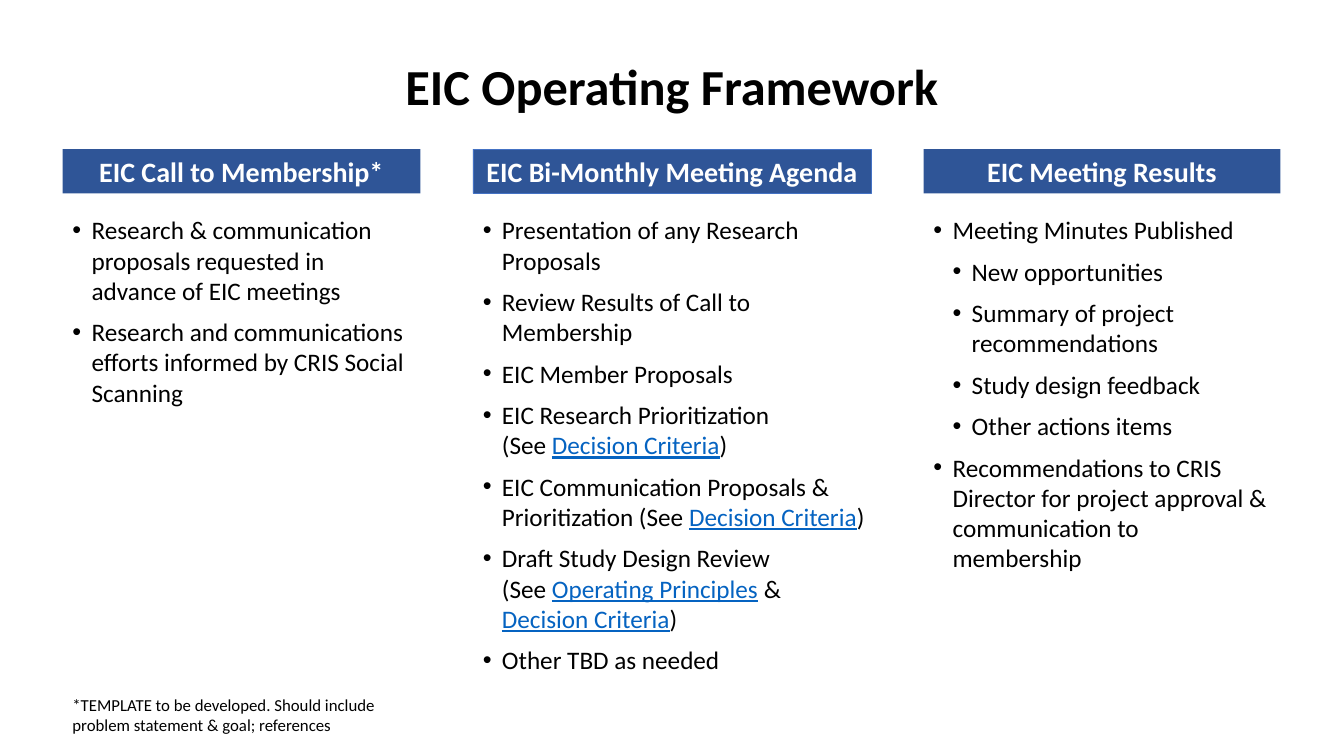
from dataclasses import dataclass

from lxml import etree
from pptx import Presentation
from pptx.dml.color import RGBColor
from pptx.enum.shapes import MSO_SHAPE
from pptx.enum.text import MSO_ANCHOR, MSO_AUTO_SIZE, PP_ALIGN
from pptx.oxml.ns import qn
from pptx.util import Pt

RECTANGLE = MSO_SHAPE.RECTANGLE
TOP, MIDDLE = MSO_ANCHOR.TOP, MSO_ANCHOR.MIDDLE
LEFT, CENTER = PP_ALIGN.LEFT, PP_ALIGN.CENTER
GROW = MSO_AUTO_SIZE.SHAPE_TO_FIT_TEXT
NO_RESIZE = MSO_AUTO_SIZE.NONE
PX = 9144
BREAK = "\v"


@dataclass(frozen=True)
class Theme:
    """Colours, font and type sizes of the slide."""
    font: str = "Calibri"
    ink: RGBColor = RGBColor(0, 0, 0)
    paper: RGBColor = RGBColor(255, 255, 255)
    band: RGBColor = RGBColor(0x2F, 0x55, 0x97)
    band_edge: RGBColor = RGBColor(0x44, 0x72, 0xC4)
    link: RGBColor = RGBColor(0x05, 0x63, 0xC1)
    title_size: int = 36
    heading_size: int = 20
    body_size: int = 18
    note_size: int = 12


THEME = Theme()
HEADING_TOP, HEADING_HEIGHT, BODY_GAP = 148, 44, 16
INDENT = 19
CRITERIA, PRINCIPLES = "Decision Criteria", "Operating Principles"
LINKED = {CRITERIA, PRINCIPLES}

CALL_ITEMS = [
    (0, ["Research & communication proposals requested in advance of EIC meetings"]),
    (0, ["Research and communications efforts informed by CRIS Social Scanning"]),
]
AGENDA_ITEMS = [
    (0, ["Presentation of any Research Proposals"]),
    (0, ["Review Results of Call to Membership"]),
    (0, ["EIC Member Proposals"]),
    (0, ["EIC Research Prioritization", BREAK, "(See ", CRITERIA, ")"]),
    (0, ["EIC Communication Proposals & Prioritization (See ", CRITERIA, ")"]),
    (0, ["Draft Study Design Review", BREAK, "(See ", PRINCIPLES, " & ", CRITERIA, ")"]),
    (0, ["Other TBD as needed"]),
]
RESULT_ITEMS = [
    (0, ["Meeting Minutes Published"]),
    (1, ["New opportunities"]),
    (1, ["Summary of project recommendations"]),
    (1, ["Study design feedback"]),
    (1, ["Other actions items"]),
    (0, ["Recommendations to CRIS Director for project approval & "
         "communication to membership"]),
]
COLUMNS = [
    (62, 355, 355, 203, "EIC Call to Membership*", CALL_ITEMS, None),
    (469, 395, 400, 471, "EIC Bi-Monthly Meeting Agenda", AGENDA_ITEMS, THEME.band_edge),
    (916, 354, 354, 369, "EIC Meeting Results", RESULT_ITEMS, None),
]


def emu(*lengths):
    """Turn px lengths into EMU."""
    return [length * PX for length in lengths]


def style_run(run, size, color, bold=False, underline=False):
    """Apply font, size, colour and weight to a run."""
    run.font.name = THEME.font
    run.font.size = Pt(size)
    run.font.color.rgb = color
    run.font.bold = bold
    run.font.underline = underline


def write_line(frame, text, size, color, bold=False, align=LEFT):
    """Fill a text frame with one wrapped paragraph."""
    frame.word_wrap = True
    frame.text = text
    paragraph = frame.paragraphs[0]
    paragraph.alignment = align
    style_run(paragraph.runs[0], size, color, bold)
    return paragraph


def add_panel(slide, box, fill=None, edge=None, edge_width=0.75):
    """Add a flat rectangle with an optional fill and edge."""
    panel = slide.shapes.add_shape(RECTANGLE, *emu(*box))
    panel.shadow.inherit = False
    if fill is None:
        panel.fill.background()
    else:
        panel.fill.solid()
        panel.fill.fore_color.rgb = fill
    if edge is None:
        panel.line.fill.background()
    else:
        panel.line.color.rgb = edge
        panel.line.width = Pt(edge_width)
    return panel


def add_bullet(paragraph, level, pieces):
    """Write one bulleted item from plain, linked and line-break pieces."""
    paragraph.level = level
    paragraph.alignment = LEFT
    paragraph.space_after = Pt(8)
    properties = paragraph._p.get_or_add_pPr()
    properties.set("marL", str(INDENT * (level + 1) * PX))
    properties.set("indent", str(-INDENT * PX))
    etree.SubElement(properties, qn("a:buFont"), typeface="Arial")
    etree.SubElement(properties, qn("a:buChar"), char="•")
    for piece in pieces:
        if piece == BREAK:
            paragraph.add_line_break()
            continue
        run = paragraph.add_run()
        run.text = piece
        linked = piece in LINKED
        style_run(run, THEME.body_size, THEME.link if linked else THEME.ink,
                  underline=linked)


def add_heading(slide, box, text, edge):
    """Add the coloured heading band of a column."""
    heading = add_panel(slide, box, THEME.band, edge, 0.5)
    frame = heading.text_frame
    write_line(frame, text, THEME.heading_size, THEME.paper, True, CENTER)
    frame.vertical_anchor = TOP
    frame.auto_size = GROW


def add_items(slide, box, items):
    """Add the bulleted body of a column."""
    frame = add_panel(slide, box, edge=THEME.paper).text_frame
    frame.word_wrap = True
    frame.vertical_anchor = TOP
    frame.auto_size = GROW
    for index, (level, pieces) in enumerate(items):
        paragraph = frame.add_paragraph() if index else frame.paragraphs[0]
        add_bullet(paragraph, level, pieces)


def add_column(slide, left, heading_width, body_width, body_height, heading, items, edge):
    """Place a heading band and its bullets below it."""
    body_top = HEADING_TOP + HEADING_HEIGHT + BODY_GAP
    add_items(slide, (left, body_top, body_width, body_height), items)
    add_heading(slide, (left, HEADING_TOP, heading_width, HEADING_HEIGHT), heading, edge)


def add_title(slide, box, text):
    """Move and format the title placeholder."""
    title = slide.shapes.title
    title.left, title.top, title.width, title.height = emu(*box)
    paragraph = write_line(title.text_frame, text, THEME.title_size, THEME.ink, True, CENTER)
    paragraph.line_spacing = 0.9
    title.text_frame.vertical_anchor = MIDDLE
    title.text_frame.auto_size = NO_RESIZE


def add_footnote(slide, box, text):
    """Add the small note under the first column."""
    frame = slide.shapes.add_textbox(*emu(*box)).text_frame
    write_line(frame, text, THEME.note_size, THEME.ink)
    frame.auto_size = GROW


def main():
    """Build and save the slide."""
    deck = Presentation()
    deck.slide_width, deck.slide_height = emu(1333, 750)
    slide = deck.slides.add_slide(deck.slide_layouts[5])
    add_title(slide, (373, 57, 587, 62), "EIC Operating Framework")
    for column in COLUMNS:
        add_column(slide, *column)
    add_footnote(slide, (62, 684, 364, 50),
                 "*TEMPLATE to be developed. Should include problem statement "
                 "& goal; references")
    deck.save("out.pptx")


if __name__ == "__main__":
    main()
